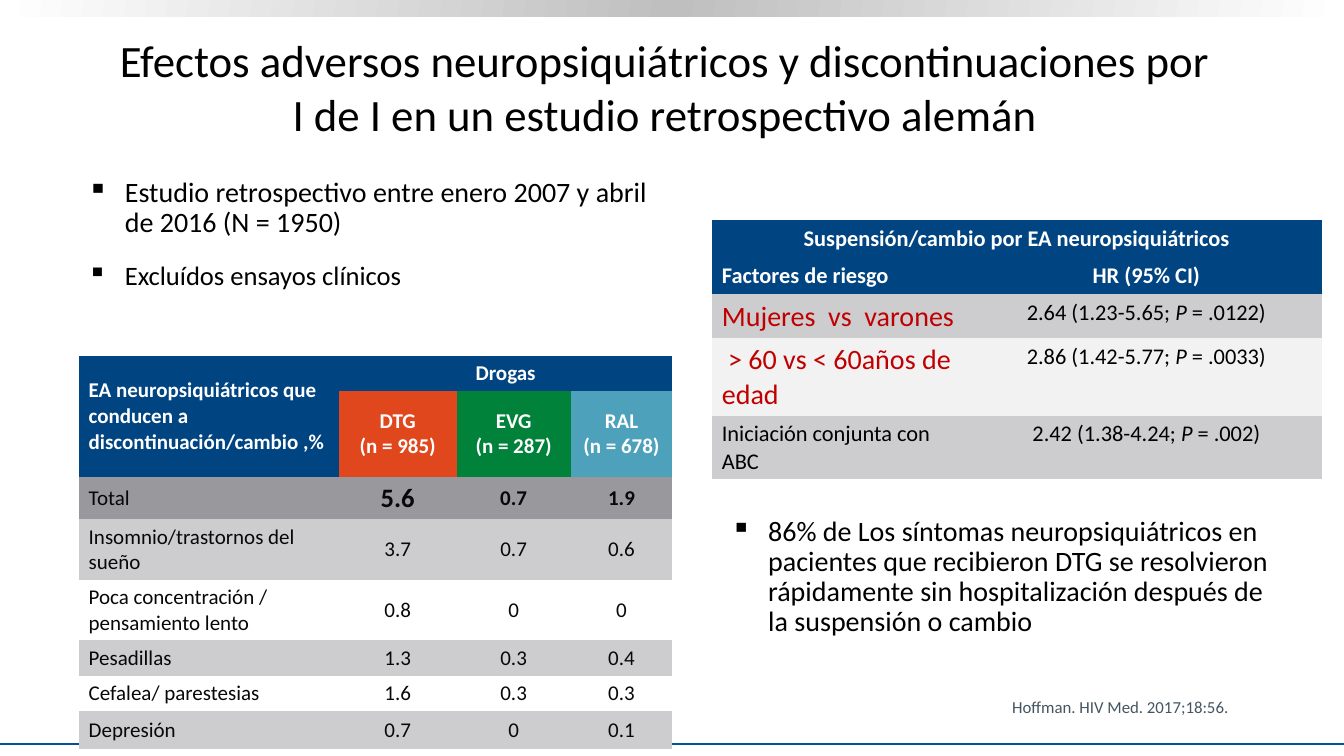
from copy import deepcopy

from lxml import etree
from pptx import Presentation
from pptx.dml.color import RGBColor
from pptx.enum.shapes import MSO_CONNECTOR, MSO_SHAPE
from pptx.enum.text import MSO_ANCHOR, PP_ALIGN
from pptx.oxml.ns import qn
from pptx.util import Inches, Pt

LEFT, CENTER = PP_ALIGN.LEFT, PP_ALIGN.CENTER
TOP, MIDDLE, BOTTOM = MSO_ANCHOR.TOP, MSO_ANCHOR.MIDDLE, MSO_ANCHOR.BOTTOM
RECTANGLE, STRAIGHT = MSO_SHAPE.RECTANGLE, MSO_CONNECTOR.STRAIGHT

WHITE = RGBColor(0xFF, 0xFF, 0xFF)
BLACK = RGBColor(0x00, 0x00, 0x00)
INK = RGBColor(0x07, 0x08, 0x0A)
SLATE = RGBColor(0x45, 0x55, 0x60)
RED = RGBColor(0xC0, 0x00, 0x00)
NAVY = RGBColor(0x00, 0x44, 0x82)
RULE_BLUE = RGBColor(0x00, 0x53, 0x9B)
ORANGE = RGBColor(0xE1, 0x47, 0x1D)
GREEN = RGBColor(0x00, 0x82, 0x3B)
TEAL = RGBColor(0x4D, 0xA1, 0xBB)
BAND_GRAY = RGBColor(0xBF, 0xBF, 0xBF)
TOTAL_GRAY = RGBColor(0x98, 0x98, 0x9D)
ROW_GRAY = RGBColor(0xCD, 0xCD, 0xCF)
PALE_GRAY = RGBColor(0xF2, 0xF2, 0xF2)

FONT = "Calibri"
PLAIN_TABLE_STYLE = "{2D5ABB26-0587-4C30-8999-92F81FD0307C}"
SLIDE_WIDTH, SLIDE_HEIGHT = 13.33, 7.5

ADVERSE_EVENTS = [
    ("Total", "5.6", "0.7", "1.9"),
    ("Insomnio/trastornos del sueño", "3.7", "0.7", "0.6"),
    ("Poca concentración / pensamiento lento", "0.8", "0", "0"),
    ("Pesadillas", "1.3", "0.3", "0.4"),
    ("Cefalea/ parestesias", "1.6", "0.3", "0.3"),
    ("Depresión", "0.7", "0", "0.1"),
]
DRUGS = [("DTG\n(n = 985)", ORANGE), ("EVG\n(n = 287)", GREEN), ("RAL\n(n = 678)", TEAL)]
# Text between asterisks is italic
RISK_FACTORS = [
    ("Mujeres  vs  varones", 20, RED, "2.64 (1.23-5.65; *P* = .0122)", ROW_GRAY),
    (" > 60 vs < 60años de edad", 20, RED, "2.86 (1.42-5.77;* P* = .0033)", PALE_GRAY),
    ("Iniciación conjunta con ABC", 16, BLACK, "2.42 (1.38-4.24; *P* = .002)", ROW_GRAY),
]


def write(para, text, size=16, color=BLACK, bold=False, align=LEFT):
    """Write text with line breaks at newlines and italics between asterisks."""
    para.alignment = align
    for line_number, line in enumerate(text.split("\n")):
        if line_number:
            para.add_line_break()
        for part_number, part in enumerate(line.split("*")):
            if part:
                span = para.add_run()
                span.text = part
                font = span.font
                font.name, font.size, font.bold = FONT, Pt(size), bold
                font.italic = part_number % 2 == 1
                font.color.rgb = color


def add_box(page, box, anchor=TOP):
    frame = page.shapes.add_textbox(*map(Inches, box)).text_frame
    frame.word_wrap = True
    frame.vertical_anchor = anchor
    return frame


def add_bullets(page, box, items):
    frame = add_box(page, box)
    for number, (text, size) in enumerate(items):
        para = frame.add_paragraph() if number else frame.paragraphs[0]
        para.line_spacing = 0.9
        para.space_before = Pt(10 if number else 0)
        para.space_after = Pt(7)
        properties = para._p.get_or_add_pPr()
        properties.set("marL", str(Inches(0.37)))
        properties.set("indent", str(-Inches(0.37)))
        etree.SubElement(properties, qn("a:buChar")).set("char", "▪")
        write(para, text, size=size)


def add_plain_table(page, box, widths, heights):
    table_shape = page.shapes.add_table(len(heights), len(widths), *map(Inches, box))
    table = table_shape.table
    table.first_row = table.horz_banding = False
    table._tbl.tblPr.find(qn("a:tableStyleId")).text = PLAIN_TABLE_STYLE
    for column, width in zip(table.columns, widths):
        column.width = Inches(width)
    for row, height in zip(table.rows, heights):
        row.height = Inches(height)
    return table


def fill_cell(cell, text, fill, anchor=MIDDLE, **text_format):
    cell.fill.solid()
    cell.fill.fore_color.rgb = fill
    cell.vertical_anchor = anchor
    write(cell.text_frame.paragraphs[0], text, **text_format)


def add_frame(page, box):
    """Gradient band along the top and rule along the bottom."""
    left, top, width, height = box
    band = page.shapes.add_shape(RECTANGLE, *map(Inches, (left, top, width, 0.16)))
    band.shadow.inherit = False
    band.line.fill.background()
    band.fill.gradient()
    band.fill.gradient_angle = 170
    stops = band._element.spPr.find(qn("a:gradFill")).find(qn("a:gsLst"))
    stops.insert(1, deepcopy(stops[0]))
    for stop, position, color in zip(
        band.fill.gradient_stops, (0, 0.5, 1), (WHITE, BAND_GRAY, WHITE)
    ):
        stop.position = position
        stop.color.rgb = color

    rule_y = Inches(top + height - 0.12)
    rule = page.shapes.add_connector(
        STRAIGHT, Inches(left), rule_y, Inches(left + width), rule_y
    )
    rule.line.color.rgb = RULE_BLUE
    rule.line.width = Pt(1.5)
    etree.SubElement(rule._element.spPr, qn("a:effectLst"))


def add_events_table(page, box):
    table = add_plain_table(
        page, box, (2.58, 1.17, 1.13, 1.01), (0.35, 0.6, 0.42, 0.6, 0.6, 0.35, 0.35, 0.38)
    )
    # Header rows
    table.cell(0, 0).merge(table.cell(1, 0))
    table.cell(0, 1).merge(table.cell(0, 3))
    header = {"size": 15, "color": WHITE, "bold": True}
    fill_cell(table.cell(0, 0), "EA neuropsiquiátricos que conducen a discontinuación/cambio ,%",
              NAVY, **header)
    fill_cell(table.cell(0, 1), "Drogas", NAVY, align=CENTER, **header)
    for column, (drug, color) in enumerate(DRUGS, 1):
        fill_cell(table.cell(1, column), drug, color, align=CENTER, **header)

    # Total row, then alternating rows
    for number, values in enumerate(ADVERSE_EVENTS):
        is_total = number == 0
        fill = TOTAL_GRAY if is_total else (WHITE, ROW_GRAY)[number % 2]
        for column, value in enumerate(values):
            fill_cell(
                table.cell(number + 2, column), value, fill, color=INK,
                size=19 if is_total and column == 1 else 15,
                bold=is_total and column > 0, align=CENTER if column else LEFT,
            )


def add_risk_table(page, box):
    table = add_plain_table(page, box, (2.57, 3.48), (0.37, 0.37, 0.43, 0.77, 0.63))
    # Header rows
    table.cell(0, 0).merge(table.cell(0, 1))
    header = {"anchor": TOP, "color": WHITE, "bold": True}
    fill_cell(table.cell(0, 0), "Suspensión/cambio por EA neuropsiquiátricos", NAVY,
              align=CENTER, **header)
    fill_cell(table.cell(1, 0), "Factores de riesgo", NAVY, **header)
    fill_cell(table.cell(1, 1), "HR (95% CI)", NAVY, align=CENTER, **header)

    # Risk factors
    for row, (factor, size, color, ratio, fill) in enumerate(RISK_FACTORS, 2):
        fill_cell(table.cell(row, 0), factor, fill, anchor=TOP, size=size, color=color)
        fill_cell(table.cell(row, 1), ratio, fill, anchor=TOP, align=CENTER)


def main():
    deck = Presentation()
    deck.slide_width, deck.slide_height = Inches(SLIDE_WIDTH), Inches(SLIDE_HEIGHT)
    page = deck.slides.add_slide(deck.slide_layouts[6])

    add_frame(page, (0, 0, SLIDE_WIDTH, SLIDE_HEIGHT))

    # Title
    title = add_box(page, (0.7, 0.25, 11.89, 1.21), anchor=MIDDLE)
    write(title.paragraphs[0],
          "Efectos adversos neuropsiquiátricos y discontinuaciones por \n"
          "I de I en un estudio retrospectivo alemán ", size=32, align=CENTER)

    # Left half
    add_bullets(page, (0.77, 1.72, 5.81, 1.36), [
        ("Estudio retrospectivo entre enero 2007 y abril de 2016 (N = 1950)", 20),
        ("Excluídos ensayos clínicos", 19),
    ])
    add_events_table(page, (0.78, 3.53, 5.89, 3.65))

    # Right half
    add_risk_table(page, (7.06, 2.18, 6.05, 2.57))
    add_bullets(page, (7.15, 5.08, 5.59, 1.54), [
        ("86% de Los síntomas neuropsiquiátricos en pacientes que recibieron DTG se "
         "resolvieron rápidamente sin hospitalización después de la suspensión o cambio", 20),
    ])
    citation = add_box(page, (9.94, 6.86, 2.49, 0.3), anchor=BOTTOM)
    write(citation.paragraphs[0], "Hoffman. HIV Med. 2017;18:56.", size=12, color=SLATE)

    deck.save("out.pptx")


if __name__ == "__main__":
    main()
